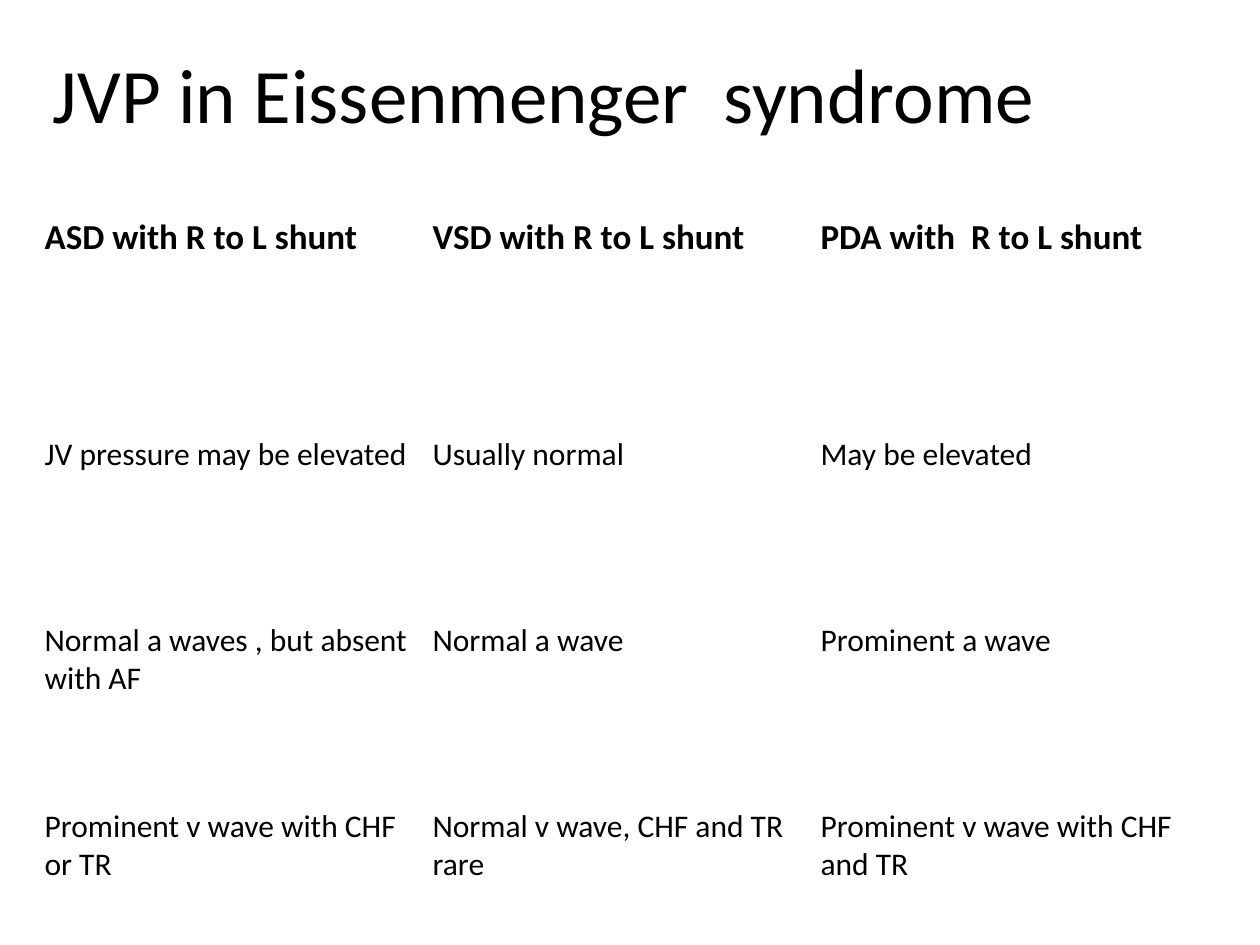
from pptx import Presentation
from pptx import util as u
from pptx.dml.color import RGBColor
from pptx.enum import text

PX = 914400 // 126
INK = "000000"
FONT = "Calibri"
FINDINGS = [
    ["ASD with R to L shunt", "VSD with R to L shunt", "PDA with  R to L shunt"],
    ["JV pressure may be elevated", "Usually normal", "May be elevated"],
    ["Normal a waves , but absent with AF", "Normal a wave", "Prominent a wave"],
    ["Prominent v wave with CHF or TR", "Normal v wave, CHF and TR rare",
     "Prominent v wave with CHF and TR"],
]


def px(length):
    """Turn whole pixels into EMU."""
    return u.Emu(length * PX)


def color(value):
    """Turn a hex string into a colour."""
    return RGBColor.from_string(value)


def write(frame, wording, size=18, bold=False, align=text.PP_ALIGN.LEFT,
          anchor=text.MSO_ANCHOR.TOP):
    """Fill a text frame with one formatted paragraph."""
    frame.word_wrap = True
    frame.vertical_anchor = anchor
    paragraph = frame.paragraphs[0]
    paragraph.alignment = align
    run = paragraph.add_run()
    run.text = wording
    run.font.name = FONT
    run.font.size = u.Pt(size)
    run.font.bold = bold
    run.font.color.rgb = color(INK)


def add_title(slide, wording, left, top, width, height, indent):
    """Add the centred heading, shifted by an inner left margin."""
    heading = slide.shapes.add_textbox(px(left), px(top), px(width), px(height))
    heading.text_frame.margin_left = px(indent)
    write(heading.text_frame, wording, size=44, align=text.PP_ALIGN.CENTER,
          anchor=text.MSO_ANCHOR.MIDDLE)


def add_findings(slide, rows, left, top, column_width, row_heights):
    """Add the plain comparison table with a bold header row."""
    columns = len(rows[0])
    findings = slide.shapes.add_table(
        len(rows), columns, px(left), px(top),
        px(column_width * columns), px(sum(row_heights))).table
    findings.first_row = False
    findings.horz_banding = False
    for column in findings.columns:
        column.width = px(column_width)
    for index, (wordings, height) in enumerate(zip(rows, row_heights)):
        findings.rows[index].height = px(height)
        header = index == 0
        for cell, wording in zip(findings.rows[index].cells, wordings):
            cell.fill.background()
            write(cell.text_frame, wording, size=20 if header else 18, bold=header)


def main():
    """Build the slide and save it."""
    deck = Presentation()
    deck.slide_width, deck.slide_height = px(1260), px(945)
    slide = deck.slides.add_slide(deck.slide_layouts[6])
    add_title(slide, "JVP in Eissenmenger  syndrome", -220, 38, 1480, 110, indent=61)
    add_findings(slide, FINDINGS, 32, 210, 388, [219, 186, 186, 186])
    deck.save("out.pptx")


if __name__ == "__main__":
    main()
